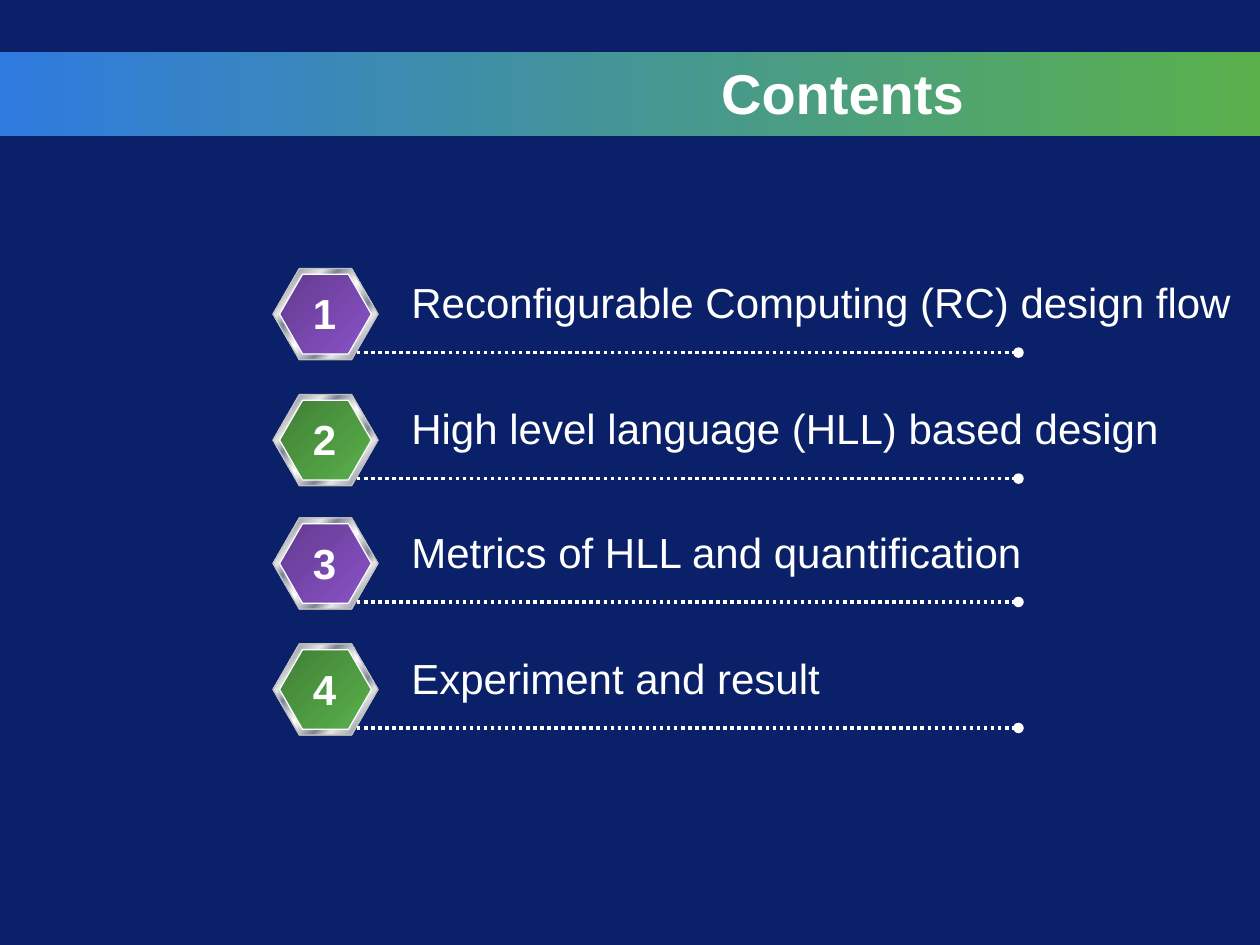
from lxml.etree import SubElement
from pptx import Presentation
from pptx.dml.color import RGBColor
from pptx.enum.dml import MSO_LINE
from pptx.enum.shapes import MSO_CONNECTOR, MSO_SHAPE
from pptx.enum.text import MSO_ANCHOR, MSO_AUTO_SIZE, PP_ALIGN
from pptx.oxml.ns import qn
from pptx.util import Pt

COLORS = {
    "background": "0A2068", "white": "FFFFFF", "rim": "C0C0C0", "shade": "808080",
    "blue": "2F7ADF", "green": "5AB14B", "dark_green": "407F36",
    "purple": "8A52C8", "dark_purple": "633B8F",
    "silver": "E6E6E6", "steel": "7D8496",
}
CHROME = [
    (0, "silver"), (7, "steel"), (26, "silver"), (34, "steel"), (46, "silver"), (50, "white"),
    (54, "silver"), (66, "steel"), (74, "silver"), (93, "steel"), (100, "silver"),
]
PURPLE = [(0, "dark_purple"), (100, "purple")]
GREEN = [(0, "dark_green"), (100, "green")]
ROWS = [
    (153.5, 488, "Reconfigurable Computing (RC) design flow"),
    (225.5, 446.4, "High level language (HLL) based design"),
    (296, 366.5, "Metrics of HLL and quantification"),
    (368, 250.6, "Experiment and result"),
]


def rgb(name):
    return RGBColor.from_string(COLORS[name])


def fill_gradient(shape, stops, angle):
    shape.fill.gradient()
    shape.fill.gradient_angle = -angle % 360
    stop_list = shape.fill._xPr.find(".//" + qn("a:gsLst"))
    for stop in list(stop_list):
        stop_list.remove(stop)
    for position, color in stops:
        stop = SubElement(stop_list, qn("a:gs"), pos=str(position * 1000))
        SubElement(stop, qn("a:srgbClr"), val=COLORS[color])


def add_text(slide, text, left, top, width, height, size=24, bold=False,
             align=PP_ALIGN.LEFT, anchor=MSO_ANCHOR.TOP, wrap=False):
    box = slide.shapes.add_textbox(Pt(left), Pt(top), Pt(width), Pt(height))
    frame = box.text_frame
    frame.word_wrap = wrap
    frame.auto_size = MSO_AUTO_SIZE.NONE if wrap else MSO_AUTO_SIZE.SHAPE_TO_FIT_TEXT
    frame.vertical_anchor = anchor
    paragraph = frame.paragraphs[0]
    paragraph.text = text
    paragraph.alignment = align
    font = paragraph.font
    font.name, font.size, font.bold = "Arial", Pt(size), bold
    font.color.rgb = rgb("white")


def add_hexagon(group, left, top, width, height, stops=None, outline=None):
    shape = group.shapes.add_shape(MSO_SHAPE.HEXAGON, Pt(left), Pt(top), Pt(width), Pt(height))
    shape.shadow.inherit = False
    shape.adjustments[0] = 0.289
    shape.adjustments[1] = 1.155
    if stops:
        fill_gradient(shape, stops, 45)
    else:
        shape.fill.solid()
        shape.fill.fore_color.rgb = rgb("shade")
    if outline:
        shape.line.color.rgb = rgb(outline)
        shape.line.width = Pt(0.75)
    else:
        shape.line.fill.background()


def add_badge(slide, left, top, width, height, stops):
    group = slide.shapes.add_group_shape()
    add_hexagon(group, left, top + 0.5, width, height)
    add_hexagon(group, left, top, width, height, CHROME, "rim")
    add_hexagon(group, left + 3.75, top + 3.25, width - 7.5, height - 6.5, stops, "white")


def add_dotted_line(slide, left, top, width):
    connector = slide.shapes.add_connector(
        MSO_CONNECTOR.STRAIGHT, Pt(left), Pt(top), Pt(left + width), Pt(top))
    line = connector.line
    line.color.rgb = rgb("white")
    line.width = Pt(2)
    line.dash_style = MSO_LINE.ROUND_DOT
    SubElement(line._get_or_add_ln(), qn("a:tailEnd"), type="oval")
    SubElement(connector._element.spPr, qn("a:effectLst"))


def add_title_band(slide, left, top, width, height, title):
    band = slide.shapes.add_shape(
        MSO_SHAPE.RECTANGLE, Pt(left), Pt(top), Pt(width), Pt(height))
    band.shadow.inherit = False
    fill_gradient(band, [(0, "blue"), (100, "green")], 0)
    band.line.fill.background()
    add_text(slide, title, left + 36, top, 522, 45, size=32, bold=True,
             align=PP_ALIGN.RIGHT, anchor=MSO_ANCHOR.MIDDLE, wrap=True)


def add_content_row(slide, left, top, label_width, number, label):
    add_badge(slide, left, top, 60, 52, PURPLE if number % 2 else GREEN)
    add_dotted_line(slide, left + 48, top + 48, 378)
    add_text(slide, label, left + 72, top + 1.25, label_width, 36)
    add_text(slide, str(number), left + 15.5, top + 7.5, 28, 36,
             bold=True, align=PP_ALIGN.CENTER)


def main():
    presentation = Presentation()
    presentation.slide_width, presentation.slide_height = Pt(720), Pt(540)
    slide = presentation.slides.add_slide(presentation.slide_layouts[6])
    slide.background.fill.solid()
    slide.background.fill.fore_color.rgb = rgb("background")
    add_title_band(slide, 0, 30, 720, 48, "Contents")
    for number, (top, label_width, label) in enumerate(ROWS, 1):
        add_content_row(slide, 156, top, label_width, number, label)
    presentation.save("out.pptx")


if __name__ == "__main__":
    main()
